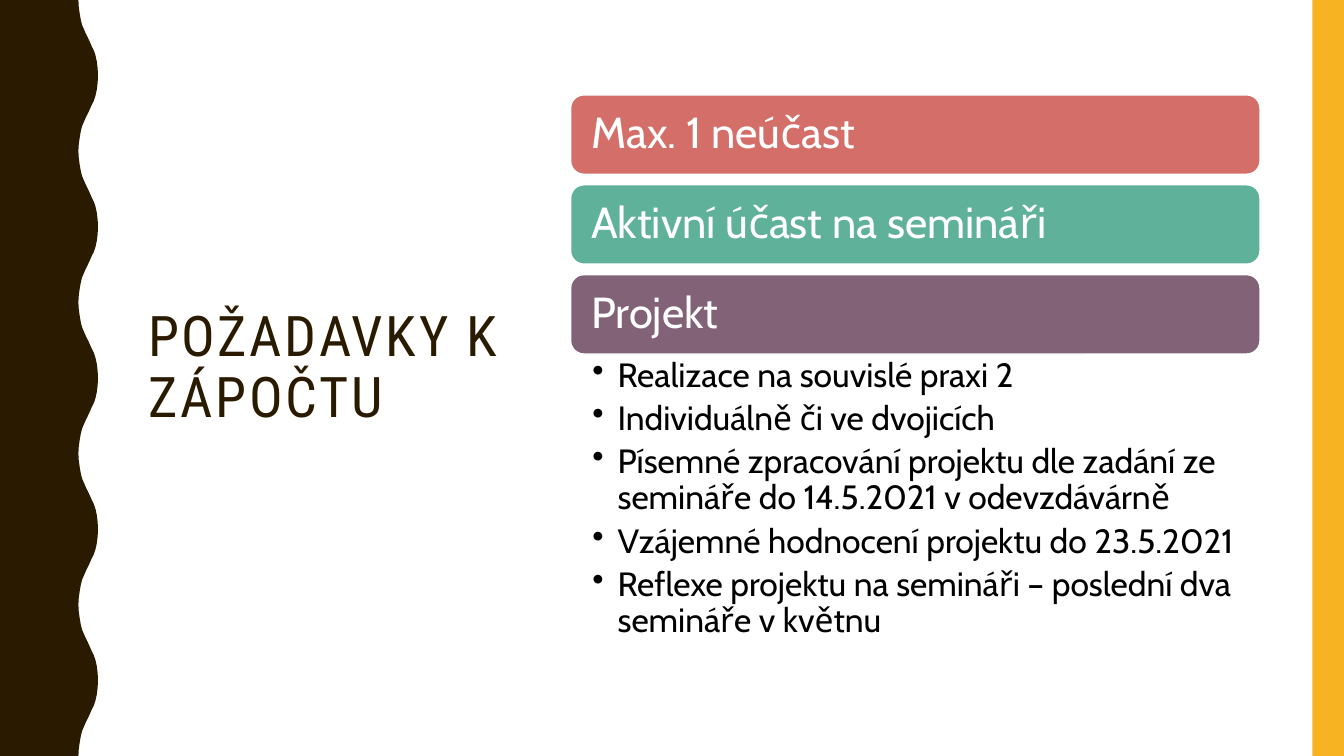
from dataclasses import dataclass

from lxml.etree import SubElement
from pptx import Presentation
from pptx.dml.color import RGBColor
from pptx.enum.shapes import MSO_SHAPE
from pptx.enum.text import MSO_ANCHOR, MSO_AUTO_SIZE, PP_ALIGN
from pptx.oxml.ns import qn
from pptx.shapes.base import BaseShape
from pptx.slide import Slide
from pptx.text.text import TextFrame, _Paragraph
from pptx.util import Pt

BROWN = RGBColor(0x2A, 0x1A, 0x00)
GOLD = RGBColor(0xF8, 0xB3, 0x23)
CORAL = RGBColor(0xD3, 0x6F, 0x68)
GREEN = RGBColor(0x5F, 0xB1, 0x9A)
PLUM = RGBColor(0x82, 0x62, 0x76)
WHITE = RGBColor(0xFF, 0xFF, 0xFF)
BLACK = RGBColor(0x00, 0x00, 0x00)

WIDE, HIGH = 960, 540
BODY, HEAD = "Cabin", "Roboto Condensed"
LEFT, SPAN = 407.6, 492.4
TOP, STEP, BAR = 67.8, 64.2, 56.7
HALF, WAVES = 54, 10
CURVE = [
    (56, 0), (56.3, 5), (57, 10), (57.8, 14.5), (58.7, 18),
    (60, 21), (61.3, 24), (62.8, 27), (64.2, 30), (65.5, 33),
    (67, 36), (68.2, 39.5), (69.2, 44), (69.8, 49), (70, 54),
]


@dataclass
class Band:
    text: str
    fill: RGBColor


BANDS = [
    Band("Max. 1 neúčast", CORAL),
    Band("Aktivní účast na semináři", GREEN),
    Band("Projekt", PLUM),
]
ITEMS = [
    "Realizace na souvislé praxi 2",
    "Individuálně či ve dvojicích",
    "Písemné zpracování projektu dle zadání ze semináře do 14.5.2021 v odevzdávárně",
    "Vzájemné hodnocení projektu do 23.5.2021",
    "Reflexe projektu na semináři – poslední dva semináře v květnu",
]


def paint(shape: BaseShape, fill: RGBColor) -> None:
    shape.shadow.inherit = False
    shape.fill.solid()
    shape.fill.fore_color.rgb = fill
    shape.line.fill.background()


def pad(frame: TextFrame, left: float, top: float, right: float) -> None:
    frame.word_wrap = True
    frame.auto_size = MSO_AUTO_SIZE.NONE
    frame.margin_left, frame.margin_right = Pt(left), Pt(right)
    frame.margin_top = frame.margin_bottom = Pt(top)


def write(para: _Paragraph, text: str, face: str, size: float, ink: RGBColor) -> None:
    para.alignment = PP_ALIGN.LEFT
    para.line_spacing = 0.9
    run = para.add_run()
    run.text = text
    run.font.name = face
    run.font.size = Pt(size)
    run.font.color.rgb = ink


def add_wave(slide: Slide) -> None:
    edge = []
    for i in range(WAVES):
        part = CURVE if i % 2 == 0 else [(x, HALF - y) for x, y in reversed(CURVE)]
        edge += [(Pt(x), Pt(y + i * HALF)) for x, y in part]
    pen = slide.shapes.build_freeform(0, 0, scale=1.0)
    pen.add_line_segments(edge + [(0, Pt(HIGH))], close=True)
    paint(pen.convert_to_shape(), BROWN)


def add_side(slide: Slide) -> None:
    side = slide.shapes.add_shape(
        MSO_SHAPE.RECTANGLE, Pt(937.5), Pt(0), Pt(22.5), Pt(HIGH))
    paint(side, GOLD)


def set_title(slide: Slide, text: str) -> None:
    title = slide.shapes.title
    title.left, title.top = Pt(98.6), Pt(50.4)
    title.width, title.height = Pt(266.4), Pt(426.2)
    frame = title.text_frame
    pad(frame, 7.2, 3.6, 7.2)
    frame.vertical_anchor = MSO_ANCHOR.MIDDLE
    para = frame.paragraphs[0]
    write(para, text, HEAD, 40, BROWN)
    para.runs[0].font._element.set("spc", "200")


def add_band(slide: Slide, band: Band, top: float) -> None:
    bar = slide.shapes.add_shape(
        MSO_SHAPE.ROUNDED_RECTANGLE, Pt(LEFT), Pt(top), Pt(SPAN), Pt(BAR))
    paint(bar, band.fill)
    bar.line.color.rgb = WHITE
    bar.line.width = Pt(1)
    frame = bar.text_frame
    pad(frame, 12, 0, 12)
    frame.vertical_anchor = MSO_ANCHOR.MIDDLE
    write(frame.paragraphs[0], band.text, BODY, 31, WHITE)


def add_list(slide: Slide, items: list[str], top: float) -> None:
    box = slide.shapes.add_textbox(Pt(LEFT), Pt(top), Pt(SPAN), Pt(207.4))
    frame = box.text_frame
    pad(frame, 15.6, 2.9, 17.3)
    for i, text in enumerate(items):
        para = frame.add_paragraph() if i else frame.paragraphs[0]
        props = para._p.get_or_add_pPr()
        props.set("marL", str(Pt(18)))
        props.set("indent", str(-Pt(18)))
        SubElement(props, qn("a:buChar")).set("char", "•")
        para.space_after = Pt(5)
        write(para, text, BODY, 24, BLACK)


def main() -> None:
    deck = Presentation()
    deck.slide_width, deck.slide_height = Pt(WIDE), Pt(HIGH)
    slide = deck.slides.add_slide(deck.slide_layouts[5])
    add_wave(slide)
    add_side(slide)
    set_title(slide, "POŽADAVKY K ZÁPOČTU")
    for i, band in enumerate(BANDS):
        add_band(slide, band, TOP + i * STEP)
    add_list(slide, ITEMS, TOP + (len(BANDS) - 1) * STEP + BAR)
    deck.save("out.pptx")


if __name__ == "__main__":
    main()
